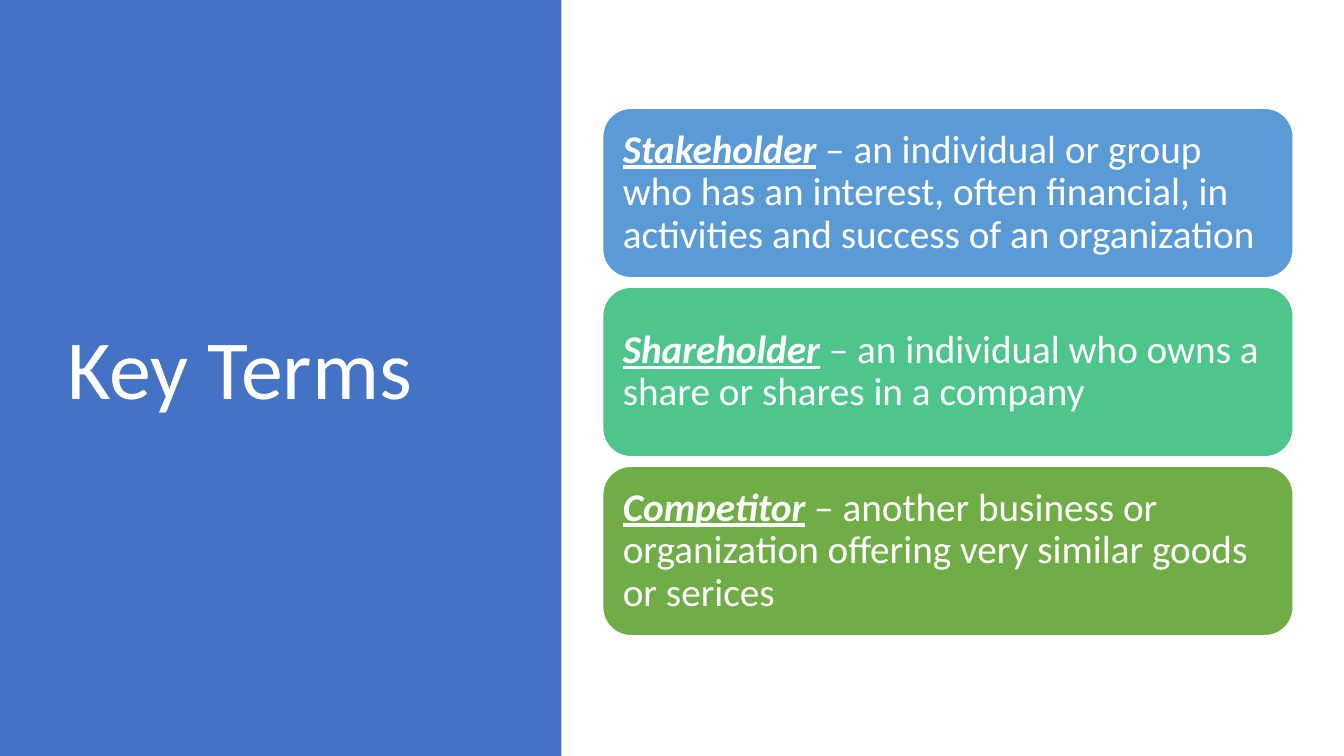
from pptx import Presentation
from pptx.dml.color import RGBColor
from pptx.enum.shapes import MSO_SHAPE as Shape
from pptx.enum.text import MSO_ANCHOR as Anchor, PP_ALIGN as Align
from pptx.util import Cm, Pt

HEADING = "Key Terms"
TERMS = [
    ("Stakeholder", " – an individual or group who has an interest, often financial, "
     "in activities and success of an organization", "blue"),
    ("Shareholder", " – an individual who owns a share or shares in a company", "teal"),
    ("Competitor", " – another business or organization offering very similar goods "
     "or serices", "green"),
]
COLORS = {"panel": "4472C4", "blue": "5B9BD5", "teal": "4DC58D",
          "green": "70AD47", "white": "FFFFFF"}
FONT = "Calibri"
SLIDE_WIDTH, SLIDE_HEIGHT = Cm(33.87), Cm(19.05)
PANEL_WIDTH = Cm(14.15)
CARD_LEFT, CARD_TOP = Cm(15.19), Cm(2.73)
CARD_WIDTH, CARD_HEIGHT, CARD_GAP = Cm(17.4), Cm(4.27), Cm(0.24)
CARD_INSET = Cm(0.3)


def color(name):
    return RGBColor.from_string(COLORS[name])


def add_block(slide, kind, left, top, width, height, fill):
    block = slide.shapes.add_shape(kind, left, top, width, height)
    block.shadow.inherit = False
    block.fill.solid()
    block.fill.fore_color.rgb = color(fill)
    return block


def style_text(frame, size):
    frame.word_wrap = True
    frame.vertical_anchor = Anchor.MIDDLE
    paragraph = frame.paragraphs[0]
    paragraph.alignment = Align.LEFT
    paragraph.line_spacing = 0.9
    paragraph.font.name = FONT
    paragraph.font.size = Pt(size)
    paragraph.font.color.rgb = color("white")
    return paragraph


def add_card(slide, row, term, meaning, fill):
    top = CARD_TOP + row * (CARD_HEIGHT + CARD_GAP)
    card = add_block(slide, Shape.ROUNDED_RECTANGLE, CARD_LEFT, top,
                     CARD_WIDTH, CARD_HEIGHT, fill)
    card.line.color.rgb = color("white")
    card.line.width = Pt(1)
    frame = card.text_frame
    frame.margin_left = frame.margin_right = CARD_INSET
    frame.margin_top = frame.margin_bottom = CARD_INSET
    paragraph = style_text(frame, 28)
    keyword = paragraph.add_run()
    keyword.text = term
    keyword.font.bold = keyword.font.italic = keyword.font.underline = True
    paragraph.add_run().text = meaning


def main():
    deck = Presentation()
    deck.slide_width, deck.slide_height = SLIDE_WIDTH, SLIDE_HEIGHT
    slide = deck.slides.add_slide(deck.slide_layouts[6])

    panel = add_block(slide, Shape.RECTANGLE, 0, 0, PANEL_WIDTH, SLIDE_HEIGHT, "panel")
    panel.line.fill.background()

    heading = slide.shapes.add_textbox(Cm(1.45), Cm(1.73), Cm(10.57), Cm(15.29))
    style_text(heading.text_frame, 60).add_run().text = HEADING

    for row, (term, meaning, fill) in enumerate(TERMS):
        add_card(slide, row, term, meaning, fill)

    deck.save("out.pptx")


if __name__ == "__main__":
    main()
